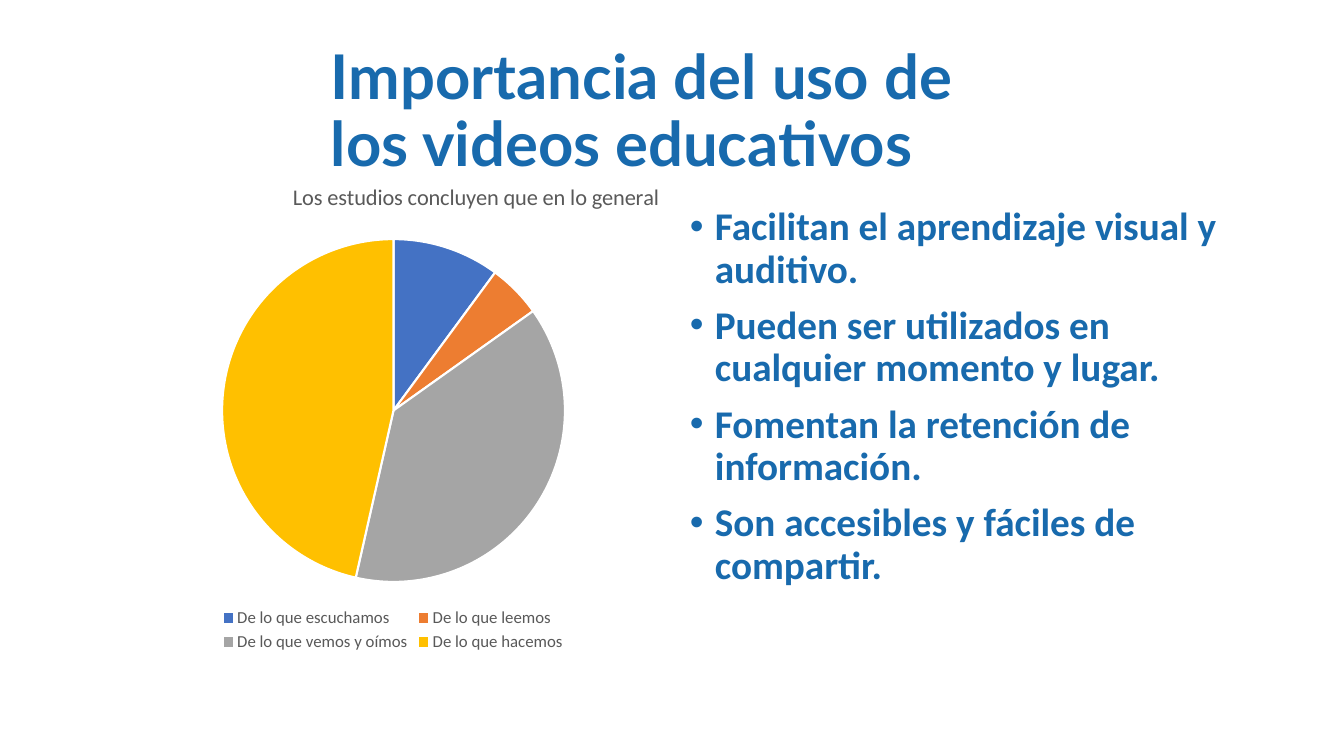
import pptx
import pptx.util
import pptx.chart.data
import pptx.enum.chart
import pptx.enum.text
import pptx.dml.color
import pptx.oxml
import pptx.oxml.ns

# Content
TITLE = "Importancia del uso de los videos educativos"
POINTS = [
    "Facilitan el aprendizaje visual y auditivo.",
    "Pueden ser utilizados en cualquier momento y lugar.",
    "Fomentan la retención de información.",
    "Son accesibles y fáciles de compartir.",
]
STUDY = "Los estudios concluyen que en lo general"
SLICES = [
    ("De lo que escuchamos", 10, "blue"),
    ("De lo que leemos", 5, "orange"),
    ("De lo que vemos y oímos", 38, "gray"),
    ("De lo que hacemos", 46, "gold"),
]
COLORS = {
    "text": "186AAD", "note": "595959", "white": "FFFFFF", "blue": "4472C4",
    "orange": "ED7D31", "gray": "A5A5A5", "gold": "FFC000",
}

# Places in px: left, top, width, height
SCALE = 9071.43
HEAD_BOX = (321, 40, 694, 146)
LIST_BOX = (680, 202, 572, 480)
PIE_BOX = (119, 169, 548, 487)
DISC = (222, 239, 343, 343)
NOTE = (289, 178)
INDENT = 25


def px(n):
    return pptx.util.Emu(round(n * SCALE))


def color(name):
    return pptx.dml.color.RGBColor.from_string(COLORS[name])


def style(font, size, name="Calibri", tint="note", bold=False):
    font.size, font.name, font.bold = pptx.util.Pt(size), name, bold
    font.color.rgb = color(tint)


def add_text(slide, lines, box, size, name, bullet=False, gap=0, middle=False):
    frame = slide.shapes.add_textbox(*map(px, box)).text_frame
    frame.word_wrap = True
    if middle:
        frame.vertical_anchor = pptx.enum.text.MSO_ANCHOR.MIDDLE
    for i, line in enumerate(lines):
        para = frame.paragraphs[0] if i == 0 else frame.add_paragraph()
        para.line_spacing = 0.9
        para.space_before = pptx.util.Pt(gap if i else 0)
        if bullet:
            props = para._p.get_or_add_pPr()
            props.set("marL", str(px(INDENT)))
            props.set("indent", str(-px(INDENT)))
            for tag, key, val in (("buFont", "typeface", "Arial"), ("buChar", "char", "•")):
                item = props.makeelement(pptx.oxml.ns.qn("a:" + tag), {key: val})
                props.append(item)
        run = para.add_run()
        run.text = line
        style(run.font, size, name, "text", True)


def layout(box, inner=False):
    """Manual chart layout for a box, as fractions of the chart."""
    left, top, wide, high = PIE_BOX
    vals = [(box[0] - left) / wide, (box[1] - top) / high]
    vals += [n / d for n, d in zip(box[2:], (wide, high))]
    target = '<c:layoutTarget val="inner"/>' if inner else ""
    modes = '<c:xMode val="edge"/><c:yMode val="edge"/>'
    sizes = "".join(f'<c:{k} val="{v:.3f}"/>' for k, v in zip("xywh", vals))
    return pptx.oxml.parse_xml(
        f'<c:layout {pptx.oxml.ns.nsdecls("c")}><c:manualLayout>'
        f"{target}{modes}{sizes}</c:manualLayout></c:layout>")


def place(node, new, index):
    for old in node.findall(pptx.oxml.ns.qn("c:layout")):
        node.remove(old)
    node.insert(index, new)


def add_pie(slide):
    data = pptx.chart.data.CategoryChartData()
    data.categories = [label for label, _, _ in SLICES]
    data.add_series(STUDY, [val for _, val, _ in SLICES])
    kind = pptx.enum.chart.XL_CHART_TYPE.PIE
    chart = slide.shapes.add_chart(kind, *map(px, PIE_BOX), data).chart
    chart.font.size, chart.font.name = pptx.util.Pt(10), "Calibri"

    # Chart title and legend
    chart.has_title = True
    run = chart.chart_title.text_frame.paragraphs[0].add_run()
    run.text = STUDY
    style(run.font, 16)
    chart.chart_title.include_in_layout = False
    place(chart.chart_title._element, layout(NOTE), 1)
    chart.has_legend = True
    chart.legend.position = pptx.enum.chart.XL_LEGEND_POSITION.BOTTOM
    chart.legend.include_in_layout = False
    style(chart.legend.font, 12)

    # Slices
    plot = chart.plots[0]
    plot.vary_by_categories = True
    place(plot._element.getparent(), layout(DISC, True), 0)
    for i, (_, _, tint) in enumerate(SLICES):
        form = plot.series[0].points[i].format
        form.fill.solid()
        form.fill.fore_color.rgb = color(tint)
        form.line.color.rgb = color("white")
        form.line.width = pptx.util.Pt(1.5)


def main():
    deck = pptx.Presentation()
    deck.slide_width, deck.slide_height = px(1344), px(756)
    slide = deck.slides.add_slide(deck.slide_layouts[6])
    add_text(slide, [TITLE], HEAD_BOX, 44, "Lato", middle=True)
    add_text(slide, POINTS, LIST_BOX, 28, "Calibri", bullet=True, gap=10)
    add_pie(slide)
    deck.save("out.pptx")


if __name__ == "__main__":
    main()
